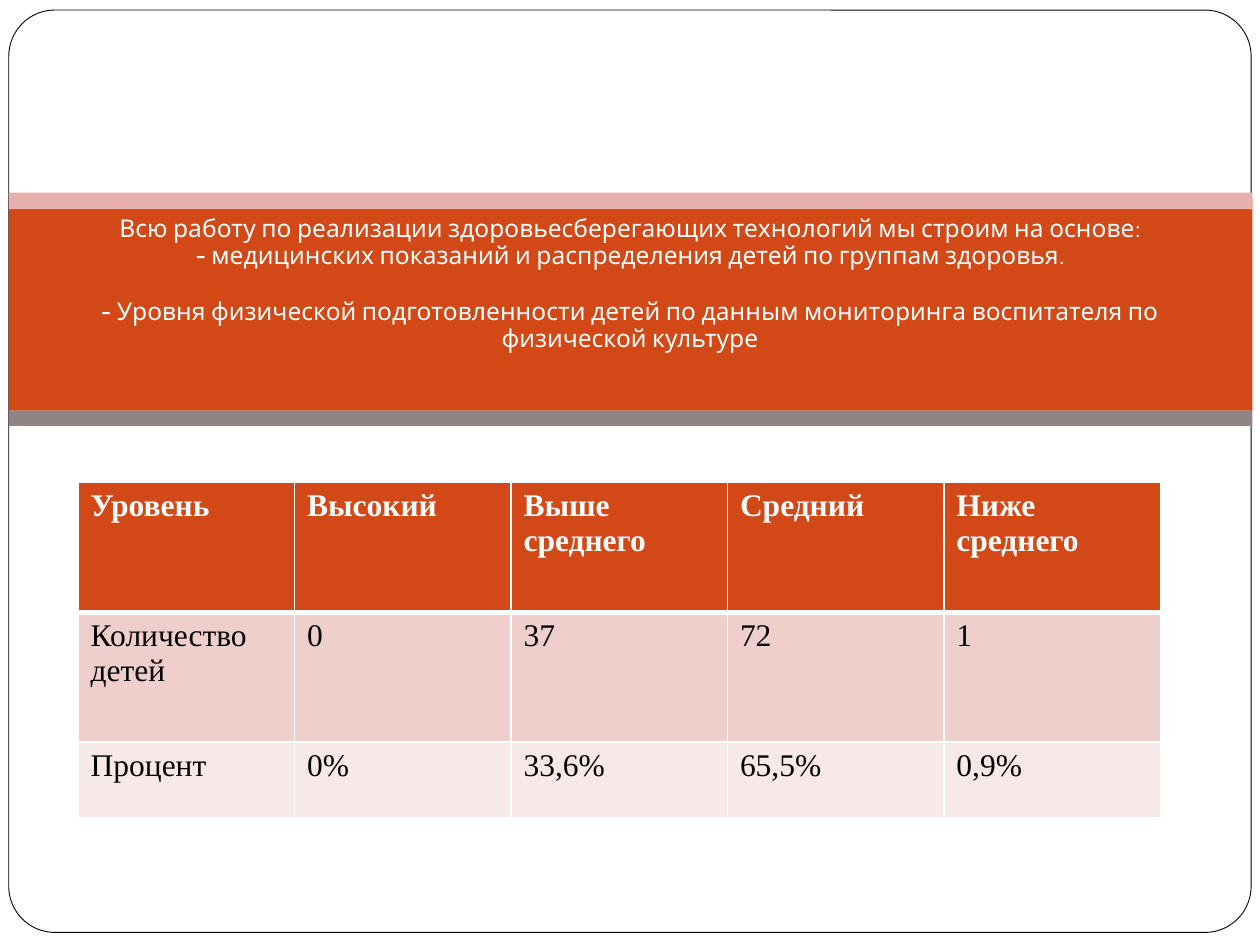
from lxml.etree import SubElement
from pptx import Presentation
from pptx.dml.color import RGBColor
from pptx.enum.shapes import MSO_SHAPE
from pptx.enum.text import MSO_ANCHOR, PP_ALIGN
from pptx.oxml.ns import qn
from pptx.util import Inches, Pt

WHITE, BLACK, ORANGE = "FFFFFF", "000000", "D34817"
PINK, GREY = "E6B1AC", "918485"
ROW_FILLS = [ORANGE, "EFCFCC", "F7E9E8"]
ROW_HEIGHTS = [1.03, 1.03, 0.6]
TITLE = [
    "Всю работу по реализации здоровьесберегающих технологий мы строим на основе:",
    "- медицинских показаний и распределения детей по группам здоровья.",
    "- Уровня физической подготовленности детей по данным мониторинга "
    "воспитателя по физической культуре",
]
LEVELS = [
    ["Уровень", "Высокий", "Выше среднего", "Средний", "Ниже среднего"],
    ["Количество детей", "0", "37", "72", "1"],
    ["Процент", "0%", "33,6%", "65,5%", "0,9%"],
]


def color(value):
    """Turn a hex string into a colour."""
    return RGBColor.from_string(value)


def write(paragraph, text, size=18, font="Times New Roman", ink=BLACK, bold=False,
          align=PP_ALIGN.LEFT, spacing=1.0, before=0):
    """Put formatted text into a paragraph."""
    paragraph.alignment = align
    paragraph.line_spacing = spacing
    paragraph.space_before = Pt(before)
    run = paragraph.add_run()
    run.text = text
    run.font.size = Pt(size)
    run.font.name = font
    run.font.bold = bold
    run.font.color.rgb = color(ink)


def add_box(slide, box, fill, preset=MSO_SHAPE.RECTANGLE):
    """Add a filled shape without line or shadow."""
    shape = slide.shapes.add_shape(preset, *map(Inches, box))
    shape.shadow.inherit = False
    shape.fill.solid()
    shape.fill.fore_color.rgb = color(fill)
    shape.line.fill.background()
    return shape


def add_frame(slide, box):
    """Add the rounded outline around the slide."""
    frame = add_box(slide, box, WHITE, MSO_SHAPE.ROUNDED_RECTANGLE)
    frame.adjustments[0] = 0.05
    frame.line.color.rgb = color(BLACK)
    frame.line.width = Pt(0.5)


def add_banner(slide, box):
    """Add the title band with its two edge stripes and text."""
    left, top, width, height = box
    add_box(slide, (left, top + 0.05, width, height - 0.17), ORANGE)
    add_box(slide, (left, top, width, 0.13), PINK)
    add_box(slide, (left, top + height - 0.12, width, 0.12), GREY)
    title = slide.shapes.add_textbox(
        Inches(0.5), Inches(top + 0.12), Inches(9), Inches(height - 0.24))
    frame = title.text_frame
    frame.word_wrap = True
    frame.vertical_anchor = MSO_ANCHOR.TOP
    frame.margin_top = Inches(0.07)
    for index, line in enumerate(TITLE):
        paragraph = frame.add_paragraph() if index else frame.paragraphs[0]
        write(paragraph, line, size=14, font="Cabin", ink=WHITE,
              align=PP_ALIGN.CENTER, spacing=0.9, before=17 if index == 2 else 0)


def set_borders(cell, **widths):
    """Draw white cell borders with the given widths in points."""
    properties = cell._tc.get_or_add_tcPr()
    for index, (side, width) in enumerate(widths.items()):
        line = properties.makeelement(qn(f"a:ln{side}"), {"w": str(Pt(width))})
        fill = SubElement(line, qn("a:solidFill"))
        SubElement(fill, qn("a:srgbClr"), val=WHITE)
        properties.insert(index, line)


def add_levels_table(slide, box):
    """Add the table of fitness levels."""
    shape = slide.shapes.add_table(len(LEVELS), len(LEVELS[0]), *map(Inches, box))
    table = shape.table
    for row_index, values in enumerate(LEVELS):
        header = row_index == 0
        table.rows[row_index].height = Inches(ROW_HEIGHTS[row_index])
        for column_index, value in enumerate(values):
            cell = table.cell(row_index, column_index)
            cell.fill.solid()
            cell.fill.fore_color.rgb = color(ROW_FILLS[row_index])
            write(cell.text_frame.paragraphs[0], value,
                  ink=WHITE if header else BLACK, bold=header)
            set_borders(cell, L=1, R=1, T=3 if row_index == 1 else 1,
                        B=3 if header else 1)


def main():
    """Build and save the slide."""
    presentation = Presentation()
    presentation.slide_width = Inches(10)
    presentation.slide_height = Inches(7.5)
    slide = presentation.slides.add_slide(presentation.slide_layouts[6])
    add_frame(slide, (0.07, 0.08, 9.86, 7.32))
    add_banner(slide, (0.07, 1.53, 9.87, 1.85))
    add_levels_table(slide, (0.62, 3.83, 8.59, sum(ROW_HEIGHTS)))
    presentation.save("out.pptx")


if __name__ == "__main__":
    main()
